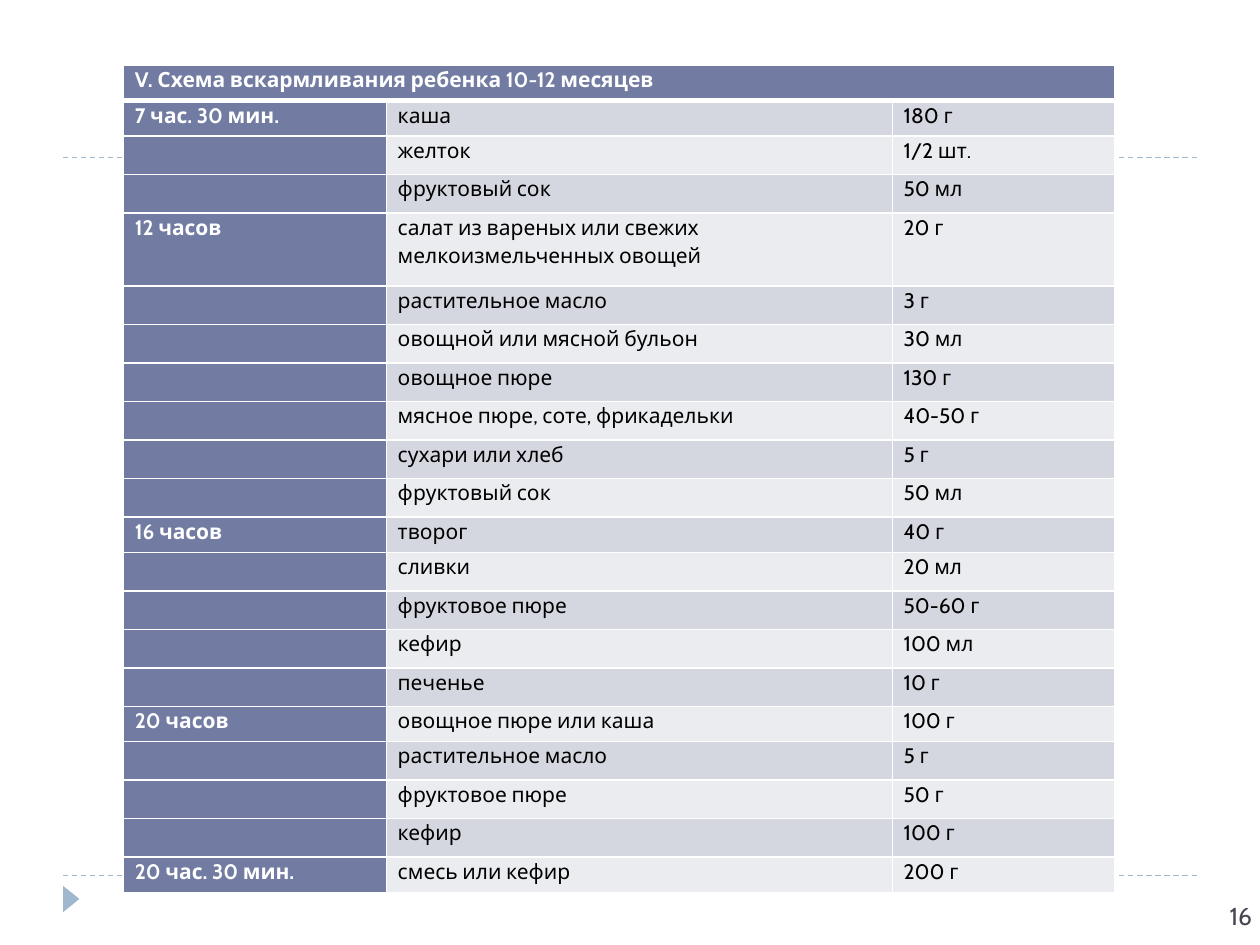
from dataclasses import dataclass

from lxml import etree
from pptx import Presentation
from pptx import util as u
from pptx.dml.color import RGBColor
from pptx.enum import dml, shapes, text
from pptx.oxml import ns

In = u.Inches


@dataclass(frozen=True)
class Theme:
    font: str = "Cabin"
    head: str = "727CA3"
    bands: tuple = ("EBECF0", "D5D7E0")
    white: str = "FFFFFF"
    black: str = "000000"
    rule: str = "9FB8CD"
    page: str = "464653"
    body: int = 12
    num: int = 14
    lead: float = 15.8


T = Theme()
TITLE = "V. Схема вскармливания ребенка 10-12 месяцев"
MEALS = [
    ("7 час. 30 мин.", [("каша", "180 г"), ("желток", "1/2 шт."),
                        ("фруктовый сок", "50 мл")]),
    ("12 часов", [("салат из вареных или свежих мелкоизмельченных овощей", "20 г"),
                  ("растительное масло", "3 г"),
                  ("овощной или мясной бульон", "30 мл"),
                  ("овощное пюре", "130 г"),
                  ("мясное пюре, соте, фрикадельки", "40-50 г"),
                  ("сухари или хлеб", "5 г"), ("фруктовый сок", "50 мл")]),
    ("16 часов", [("творог", "40 г"), ("сливки", "20 мл"),
                  ("фруктовое пюре", "50-60 г"), ("кефир", "100 мл"),
                  ("печенье", "10 г")]),
    ("20 часов", [("овощное пюре или каша", "100 г"),
                  ("растительное масло", "5 г"),
                  ("фруктовое пюре", "50 г"), ("кефир", "100 г")]),
    ("20 час. 30 мин.", [("смесь или кефир", "200 г")]),
]


def rgb(code):
    return RGBColor.from_string(code)


def style(para, size, color, bold=False):
    for run in para.runs:
        font = run.font
        font.name, font.size, font.bold = T.font, u.Pt(size), bold
        font.color.rgb = rgb(color)


def border(cell, top, base):
    """Add white edges; only top and bottom weights vary."""
    props = cell._tc.get_or_add_tcPr()
    for side, width in (("L", 1), ("R", 1), ("T", top), ("B", base)):
        edge = etree.SubElement(props, ns.qn("a:ln" + side), w=str(u.Pt(width)))
        fill = etree.SubElement(edge, ns.qn("a:solidFill"))
        etree.SubElement(fill, ns.qn("a:srgbClr"), val=T.white)


def fill_cell(cell, words, fill, color, bold, top=1, base=1):
    border(cell, top, base)
    cell.fill.solid()
    cell.fill.fore_color.rgb = rgb(fill)
    cell.margin_left = cell.margin_right = In(0.09)
    cell.margin_top = cell.margin_bottom = 0
    cell.text_frame.text = words
    para = cell.text_frame.paragraphs[0]
    para.line_spacing = u.Pt(T.lead)
    style(para, T.body, color, bold)


def add_menu(slide, left, top, width, height):
    """Feeding table: title row, then one row per dish."""
    rows = [(TITLE, "", "")]
    for time, foods in MEALS:
        for i, food in enumerate(foods):
            rows.append((time if i == 0 else "", *food))
    grid = slide.shapes.add_table(len(rows), 3, In(left), In(top),
                                  In(width), In(height)).table

    for col, part in zip(grid.columns, (2.09, 4.02, 1.77)):
        col.width = In(width * part / 7.88)

    # Timed rows are slightly lower, the salad row is double
    tall, low = 0.58, 0.28
    fixed = {r: low for r, row in enumerate(rows) if row[0]}
    fixed[4] = tall
    rest = (height - sum(fixed.values())) / (len(rows) - len(fixed))
    for r, row in enumerate(grid.rows):
        row.height = In(fixed.get(r, rest))

    grid.cell(0, 0).merge(grid.cell(0, 2))
    for r, row in enumerate(rows):
        for c, words in enumerate(row):
            head = r == 0 or c == 0
            fill_cell(grid.cell(r, c), words,
                      T.head if head else T.bands[r % 2],
                      T.white if head else T.black, head,
                      top=3 if r == 1 else 1, base=3 if r == 0 else 1)


def add_rule(slide, left, top, width):
    line = slide.shapes.add_connector(shapes.MSO_CONNECTOR.STRAIGHT, In(left),
                                      In(top), In(left + width), In(top))
    line.line.color.rgb = rgb(T.rule)
    line.line.width = u.Pt(0.75)
    line.line.dash_style = dml.MSO_LINE.DASH
    etree.SubElement(line._element.spPr, ns.qn("a:effectLst"))


def add_mark(slide, left, top, width, height):
    mark = slide.shapes.add_shape(shapes.MSO_SHAPE.ISOSCELES_TRIANGLE,
                                  In(left), In(top), In(width), In(height))
    mark.rotation = 90
    mark.shadow.inherit = False
    mark.fill.solid()
    mark.fill.fore_color.rgb = rgb(T.rule)
    mark.line.fill.background()


def add_page(slide, left, top, width, height):
    box = slide.shapes.add_textbox(In(left), In(top), In(width), In(height))
    frame = box.text_frame
    frame.word_wrap = True
    frame.vertical_anchor = text.MSO_ANCHOR.TOP
    frame.text = "16"
    style(frame.paragraphs[0], T.num, T.page)


def main():
    deck = Presentation()
    deck.slide_width, deck.slide_height = In(10), In(7.5)
    slide = deck.slides.add_slide(deck.slide_layouts[6])

    # Backdrop
    for top in (6.95, 1.25):
        add_rule(slide, 0.5, top, 9)
    add_mark(slide, 0.46, 7.07, 0.21, 0.13)

    # Content
    add_menu(slide, 0.98, 0.52, 7.87, 6.3)
    add_page(slide, 9.66, 7.1, 0.68, 0.4)
    deck.save("out.pptx")


if __name__ == "__main__":
    main()
